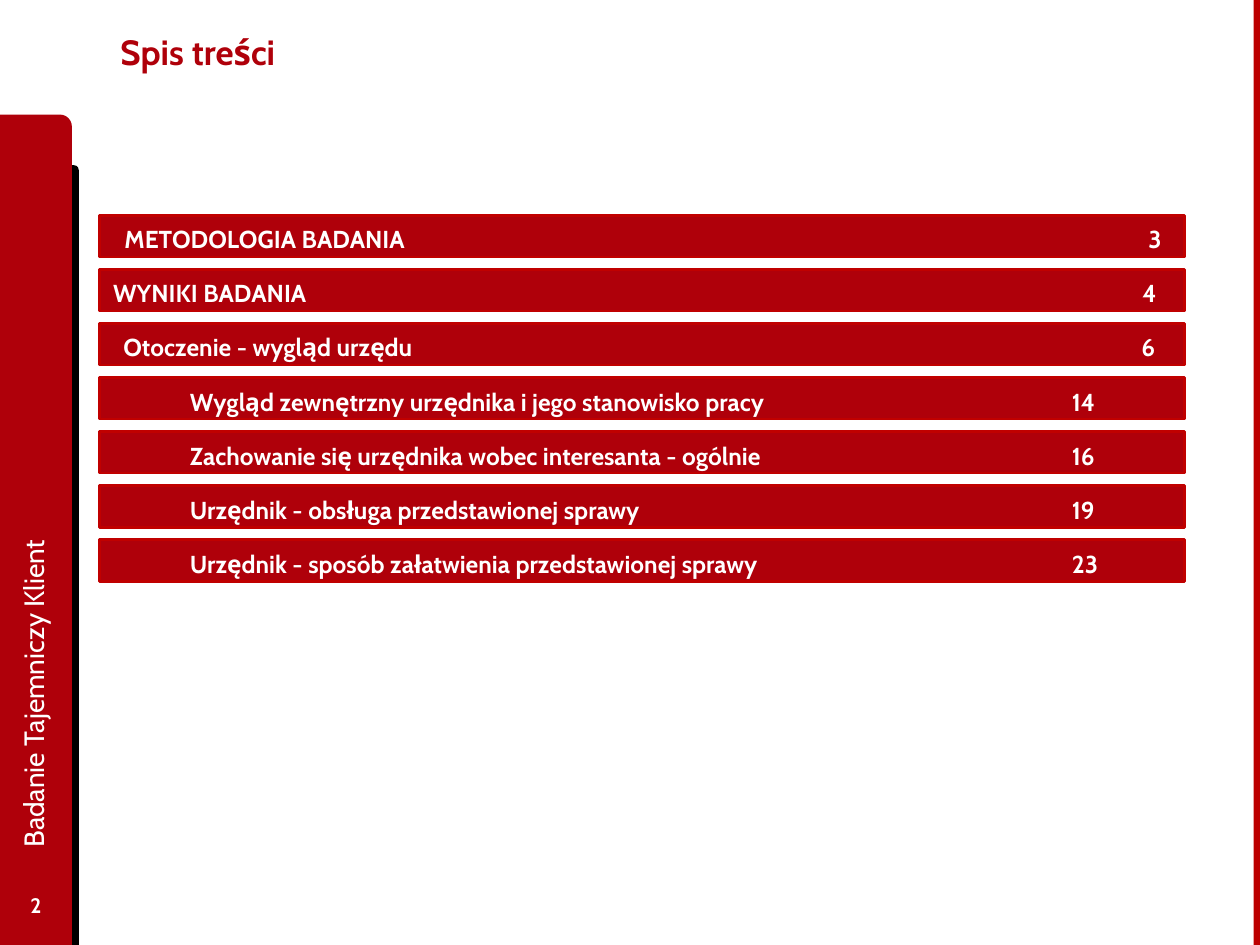
from pptx import Presentation
from pptx.dml.color import RGBColor
from pptx.enum.shapes import MSO_SHAPE
from pptx.enum.text import MSO_ANCHOR, PP_ALIGN
from pptx.oxml.ns import qn
from pptx.util import Cm, Pt
from lxml import etree

RECTANGLE = MSO_SHAPE.RECTANGLE
ROUND_CORNER = MSO_SHAPE.ROUND_1_RECTANGLE
MIDDLE = MSO_ANCHOR.MIDDLE
LEFT, CENTER = PP_ALIGN.LEFT, PP_ALIGN.CENTER

COLORS = {"red": "AF000A", "edge": "C00000", "stripe": "BD0000",
          "black": "000000", "white": "FFFFFF"}

# Text, indent of the text and place of the page number (cm from the bar's left)
CONTENTS = [
    ("METODOLOGIA BADANIA", "3", 0.5, 21.14),
    ("WYNIKI BADANIA", "4", 0.27, 21.02),
    ("Otoczenie - wygląd urzędu", "6", 0.48, 21),
    ("Wygląd zewnętrzny urzędnika i jego stanowisko pracy", "14", 1.82, 19.6),
    ("Zachowanie się urzędnika wobec interesanta - ogólnie", "16", 1.82, 19.6),
    ("Urzędnik - obsługa przedstawionej sprawy", "19", 1.82, 19.6),
    ("Urzędnik - sposób załatwienia przedstawionej sprawy", "23", 1.82, 19.6),
]
BAR_LEFT, BAR_TOP, BAR_WIDTH, BAR_HEIGHT, BAR_PITCH = 2.01, 4.34, 21.87, 0.84, 1.09


def color(name):
    return RGBColor.from_string(COLORS[name])


class PageBuilder:
    font_name = "Cabin"

    def __init__(self, page):
        self.page = page

    def style(self, para, size, ink, bold):
        font = para.font
        font.name, font.size, font.bold = self.font_name, Pt(size), bold
        font.color.rgb = color(ink)

    def shape(self, kind, left, top, width, height, fill):
        shape = self.page.shapes.add_shape(
            kind, Cm(left), Cm(top), Cm(width), Cm(height))
        shape.shadow.inherit = False
        shape.fill.solid()
        shape.fill.fore_color.rgb = color(fill)
        shape.line.fill.background()
        return shape

    def text(self, words, left, top, width, height, size, ink="white",
             bold=True, align=LEFT, rotation=0):
        box = self.page.shapes.add_textbox(
            Cm(left), Cm(top), Cm(width), Cm(height))
        box.rotation = rotation
        frame = box.text_frame
        frame.word_wrap = True
        frame.vertical_anchor = MIDDLE
        para = frame.paragraphs[0]
        para.text = words
        para.alignment = align
        self.style(para, size, ink, bold)

    def contents_bar(self, top, title, number, indent, number_at):
        """Draw one bar whose page number stands at a tab stop."""
        bar = self.shape(RECTANGLE, BAR_LEFT, top, BAR_WIDTH, BAR_HEIGHT, "red")
        bar.line.color.rgb = color("edge")
        bar.line.width = Pt(1.5)
        frame = bar.text_frame
        frame.word_wrap = True
        frame.vertical_anchor = MIDDLE
        frame.margin_left = Cm(indent)
        para = frame.paragraphs[0]
        para.text = f"{title}\t{number}"
        para.alignment = LEFT
        tabs = etree.SubElement(para._p.get_or_add_pPr(), qn("a:tabLst"))
        etree.SubElement(tabs, qn("a:tab"), pos=str(Cm(number_at - indent)), algn="l")
        para.line_spacing = 1.2
        self.style(para, 14, "white", True)


def main():
    deck = Presentation()
    deck.slide_width, deck.slide_height = Cm(25.4), Cm(19.05)
    builder = PageBuilder(deck.slides.add_slide(deck.slide_layouts[6]))

    builder.shape(ROUND_CORNER, 0.99, 3.33, 0.6, 15.72, "black")
    builder.shape(ROUND_CORNER, 0, 2.31, 1.45, 16.74, "red")
    builder.shape(RECTANGLE, 25.27, 0, 0.13, 19.05, "stripe")

    builder.text("Spis treści", 2.18, 0.13, 19.74, 1.83, 20, ink="red")
    builder.text("Badanie Tajemniczy Klient", -6.65, 9.37, 14.63, 1.3, 16,
                 bold=False, rotation=270)
    builder.text("2", 0, 17.73, 1.45, 1.02, 12, align=CENTER)

    for row, entry in enumerate(CONTENTS):
        builder.contents_bar(BAR_TOP + row * BAR_PITCH, *entry)

    deck.save("out.pptx")


if __name__ == "__main__":
    main()
